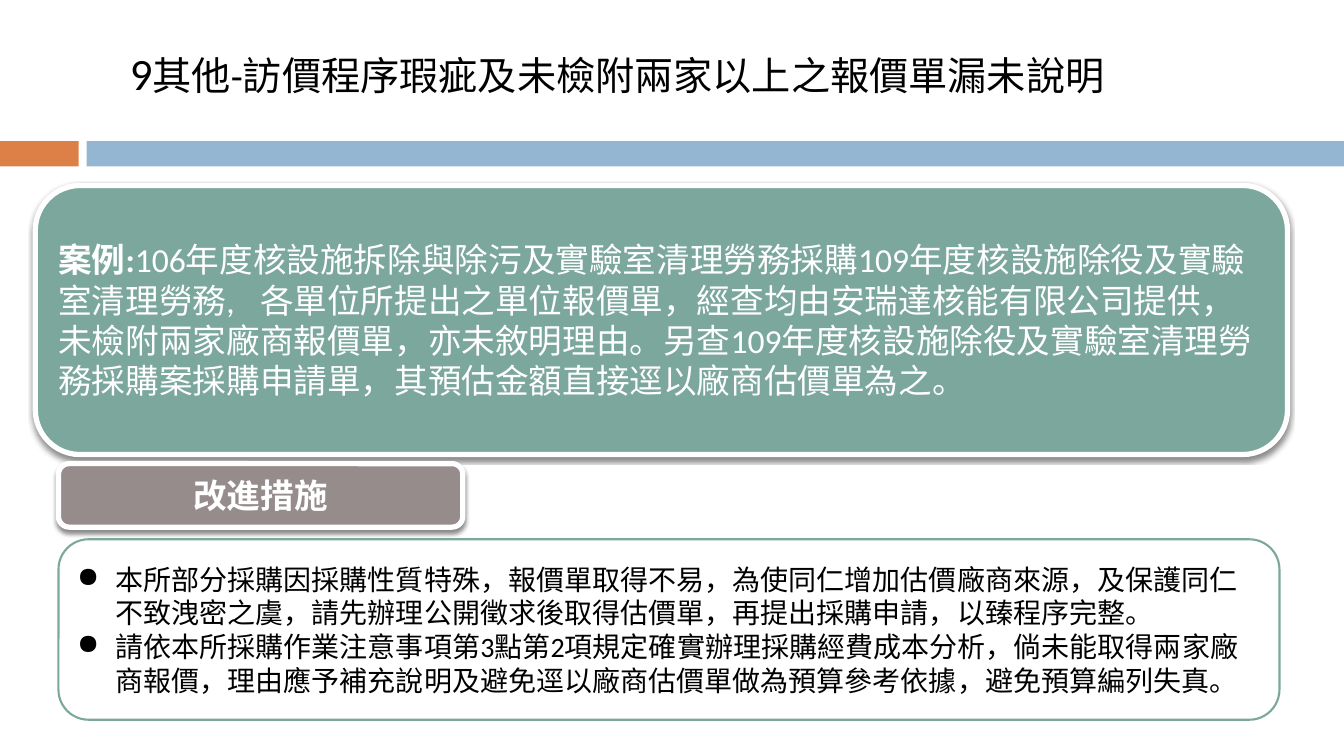
from lxml import etree
from pptx import Presentation
from pptx.dml.color import RGBColor
from pptx.enum.shapes import MSO_SHAPE
from pptx.enum.text import MSO_ANCHOR, PP_ALIGN
from pptx.oxml.ns import qn
from pptx.util import Inches, Pt

RECT, ROUNDED = MSO_SHAPE.RECTANGLE, MSO_SHAPE.ROUNDED_RECTANGLE
TOP, MIDDLE = MSO_ANCHOR.TOP, MSO_ANCHOR.MIDDLE
LEFT, CENTER = PP_ALIGN.LEFT, PP_ALIGN.CENTER

BLACK = RGBColor(0x00, 0x00, 0x00)
WHITE = RGBColor(0xFF, 0xFF, 0xFF)
ORANGE = RGBColor(0xDD, 0x80, 0x47)
BLUE = RGBColor(0x94, 0xB6, 0xD2)
GREEN = RGBColor(0x7B, 0xA7, 0x9D)
TAUPE = RGBColor(0x96, 0x8C, 0x8C)


class SlideBuilder:
    latin_font = "Calibri"
    asian_font = "Noto Sans CJK SC"
    bullet_indent = Inches(0.38)

    def __init__(self, slide):
        self.slide = slide

    def box(self, kind, at, fill, line=None, line_width=0, shadow=False):
        sp = self.slide.shapes.add_shape(kind, *map(Inches, at))
        sp.shadow.inherit = False
        sp.fill.solid()
        sp.fill.fore_color.rgb = fill
        if line is None:
            sp.line.fill.background()
        else:
            sp.line.color.rgb = line
            sp.line.width = Pt(line_width)
        if shadow:
            self.drop_shadow(sp)
        return sp

    def drop_shadow(self, sp):
        effects = sp._element.spPr.find(qn("a:effectLst"))
        outer = etree.SubElement(effects, qn("a:outerShdw"), blurRad=str(Pt(3)),
                                 dist=str(Pt(2.4)), dir="5400000", rotWithShape="0")
        color = etree.SubElement(outer, qn("a:srgbClr"), val=str(BLACK))
        etree.SubElement(color, qn("a:alpha"), val="45000")

    def textbox(self, at):
        return self.slide.shapes.add_textbox(*map(Inches, at))

    def add_text(self, sp, paragraphs, color, anchor=MIDDLE, align=LEFT, bullet=None):
        """Each paragraph is a list of (text, size, bold) runs."""
        tf = sp.text_frame
        tf.word_wrap = True
        tf.vertical_anchor = anchor
        for i, runs in enumerate(paragraphs):
            p = tf.add_paragraph() if i else tf.paragraphs[0]
            p.alignment = align
            if bullet:
                self.bullet(p, bullet)
            for text, size, bold in runs:
                r = p.add_run()
                r.text = text
                style = {"name": self.latin_font, "size": Pt(size), "bold": bold}
                for name, value in style.items():
                    setattr(r.font, name, value)
                r.font.color.rgb = color
                etree.SubElement(r._r.get_or_add_rPr(), qn("a:ea"),
                                 typeface=self.asian_font)

    def bullet(self, p, char):
        pPr = p._p.get_or_add_pPr()
        pPr.set("marL", str(self.bullet_indent))
        pPr.set("indent", str(-self.bullet_indent))
        etree.SubElement(pPr, qn("a:buChar"), char=char)


def main():
    prs = Presentation()
    prs.slide_width, prs.slide_height = Inches(13.33), Inches(7.5)
    s = SlideBuilder(prs.slides.add_slide(prs.slide_layouts[6]))

    # Header band
    s.box(RECT, (0, 1.4, 0.78, 0.25), ORANGE)
    s.box(RECT, (0.86, 1.4, 12.47, 0.25), BLUE)

    # Title
    title = s.textbox((1.19, 0.4, 11.09, 1.18))
    s.add_text(title, [[("9", 32, False),
                        ("其他-訪價程序瑕疵及未檢附兩家以上之報價單漏未說明", 28, False)]],
               BLACK, anchor=TOP)

    # Case
    case = s.box(ROUNDED, (0.35, 1.84, 12.42, 2.67), GREEN, WHITE, 3.75, shadow=True)
    s.add_text(case, [[
        ("案例:", 24, True),
        ("106年度核設施拆除與除污及實驗室清理勞務採購109年度核設施除役及實驗室清理勞務,\t"
         "各單位所提出之單位報價單，經查均由安瑞達核能有限公司提供，未檢附兩家廠商報價單，"
         "亦未敘明理由。另查109年度核設施除役及實驗室清理勞務採購案採購申請單，"
         "其預估金額直接逕以廠商估價單為之。", 24, False)]], WHITE)

    # Improvement measures
    measures = s.box(ROUNDED, (0.58, 5.35, 12.11, 1.79), WHITE, GREEN, 1.5)
    s.add_text(measures, [
        [("本所部分採購因採購性質特殊，報價單取得不易，為使同仁增加估價廠商來源，"
          "及保護同仁不致洩密之虞，請先辦理公開徵求後取得估價單，再提出採購申請，"
          "以臻程序完整。", 20, False)],
        [("請依本所採購作業注意事項第3點第2項規定確實辦理採購經費成本分析，"
          "倘未能取得兩家廠商報價，理由應予補充說明及避免逕以廠商估價單做為預算參考依據，"
          "避免預算編列失真。", 20, False)],
    ], BLACK, bullet="●")

    heading = s.box(ROUNDED, (0.58, 4.6, 4.01, 0.63), TAUPE, WHITE, 3.75, shadow=True)
    s.add_text(heading, [[("改進措施", 24, True)]], WHITE, align=CENTER)

    prs.save("out.pptx")


if __name__ == "__main__":
    main()
